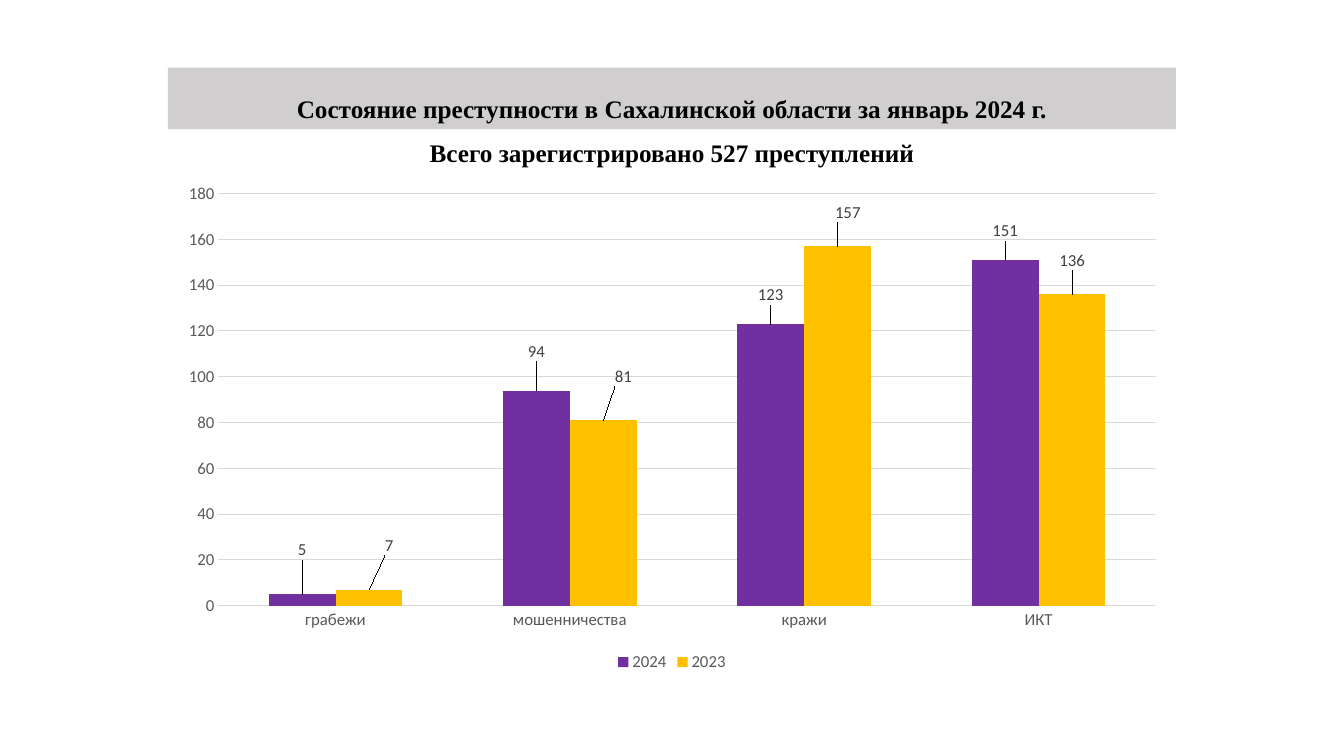
from lxml import etree
from pptx import Presentation
from pptx.chart.data import CategoryChartData
from pptx.dml.color import RGBColor
from pptx.enum.chart import XL_CHART_TYPE, XL_LABEL_POSITION as LABEL_POS
from pptx.enum.chart import XL_LEGEND_POSITION as LEGEND_POS, XL_TICK_MARK as TICK
from pptx.enum.shapes import MSO_SHAPE
from pptx.enum.text import MSO_ANCHOR, PP_ALIGN
from pptx.oxml.ns import qn
from pptx.util import Pt

BLACK = RGBColor(0x00, 0x00, 0x00)
BAND = RGBColor(0xD0, 0xCE, 0xCE)
GRID = RGBColor(0xD9, 0xD9, 0xD9)
AXIS_TEXT = RGBColor(0x59, 0x59, 0x59)
LABEL_TEXT = RGBColor(0x40, 0x40, 0x40)
PURPLE = RGBColor(0x70, 0x30, 0xA0)
AMBER = RGBColor(0xFF, 0xC0, 0x00)

LEFT, WIDTH = Pt(120), Pt(720)
CATEGORIES = ["грабежи", "мошенничества", "кражи", "ИКТ"]
# Name, colour, values, label shifts as fractions of the chart size
SERIES = [
    ("2024", PURPLE, [5, 94, 123, 151],
     [(0, -0.06), (0, -0.05), (0, -0.03), (0, -0.03)]),
    ("2023", AMBER, [7, 81, 157, 136],
     [(0.02, -0.06), (0.02, -0.06), (0.01, -0.04), (0, -0.04)]),
]


def style_font(font, color, size=12, name="Calibri", bold=False):
    font.name, font.size, font.bold = name, Pt(size), bold
    font.color.rgb = color


def add_layout(parent, index, **settings):
    """Insert a manual chart layout as the given child of parent."""
    layout = etree.Element(qn("c:layout"))
    manual = etree.SubElement(layout, qn("c:manualLayout"))
    for key, value in settings.items():
        etree.SubElement(manual, qn(f"c:{key}")).set("val", str(value))
    parent.insert(index, layout)


prs = Presentation()
prs.slide_width, prs.slide_height = Pt(960), Pt(540)
s = prs.slides.add_slide(prs.slide_layouts[6])

# Title band and subtitle
title = s.shapes.add_shape(MSO_SHAPE.RECTANGLE, LEFT, Pt(48.25), WIDTH, Pt(44))
title.shadow.inherit = False
title.fill.solid()
title.fill.fore_color.rgb = BAND
title.line.fill.background()
subtitle = s.shapes.add_textbox(LEFT, Pt(98.5), WIDTH, Pt(26))

for sp, text, anchor, spacing in [
    (title, "Состояние преступности в Сахалинской области за январь 2024 г.",
     MSO_ANCHOR.BOTTOM, 0.9),
    (subtitle, "Всего зарегистрировано 527 преступлений", MSO_ANCHOR.TOP, 0.8),
]:
    tf = sp.text_frame
    tf.word_wrap = True
    tf.vertical_anchor = anchor
    p = tf.paragraphs[0]
    p.text = text
    p.alignment = PP_ALIGN.CENTER
    p.line_spacing = spacing
    style_font(p.font, BLACK, 18, "Times New Roman", True)

# Column chart
data = CategoryChartData()
data.categories = CATEGORIES
for name, _, values, _ in SERIES:
    data.add_series(name, values)
chart = s.shapes.add_chart(XL_CHART_TYPE.COLUMN_CLUSTERED, LEFT, Pt(124),
                           WIDTH, Pt(359), data).chart
style_font(chart.font, BLACK, 10)
chart.has_title = False
plot = chart.plots[0]
plot.vary_by_categories = False
plot.gap_width, plot.overlap = 150, 0

# Axes
for axis in (chart.category_axis, chart.value_axis):
    axis.major_tick_mark = axis.minor_tick_mark = TICK.NONE
    axis.format.line.fill.background()
    style_font(axis.tick_labels.font, AXIS_TEXT)
axis = chart.value_axis
axis.minimum_scale, axis.maximum_scale, axis.major_unit = 0, 180, 20
axis.has_major_gridlines = True
axis.major_gridlines.format.line.color.rgb = GRID
axis.major_gridlines.format.line.width = Pt(0.75)

# Legend
chart.has_legend = True
chart.legend.position = LEGEND_POS.BOTTOM
chart.legend.include_in_layout = False
style_font(chart.legend.font, AXIS_TEXT)

# Series colours and value labels
shifts = []
for series, (_, color, values, label_shifts) in zip(plot.series, SERIES):
    series.format.fill.solid()
    series.format.fill.fore_color.rgb = color
    series.data_labels.show_value = True
    series.data_labels.position = LABEL_POS.OUTSIDE_END
    style_font(series.data_labels.font, LABEL_TEXT)
    for i in range(len(values)):
        label = series.points[i].data_label
        style_font(label.font, LABEL_TEXT)
        label.position = LABEL_POS.OUTSIDE_END
    shifts += label_shifts

# Label shifts and plot area
for label, (dx, dy) in zip(chart.element.xpath(".//c:dLbl"), shifts):
    add_layout(label, 1, x=dx, y=dy)
plot_area = chart.element.xpath(".//c:plotArea")[0]
for layout in plot_area.findall(qn("c:layout")):
    plot_area.remove(layout)
add_layout(plot_area, 0, layoutTarget="inner", xMode="edge", yMode="edge",
           x=0.05, y=0.04, w=0.93, h=0.82)

prs.save("out.pptx")
